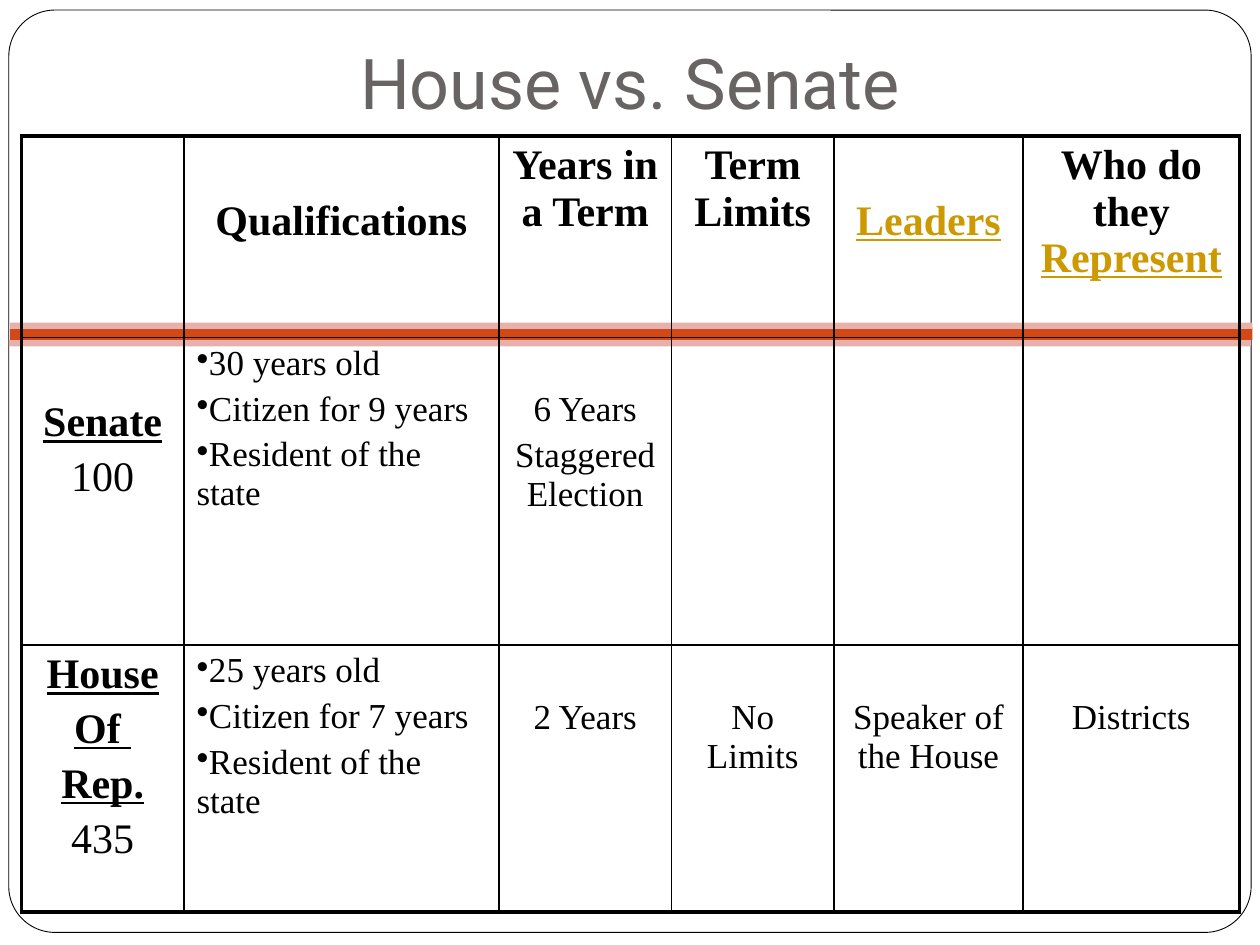
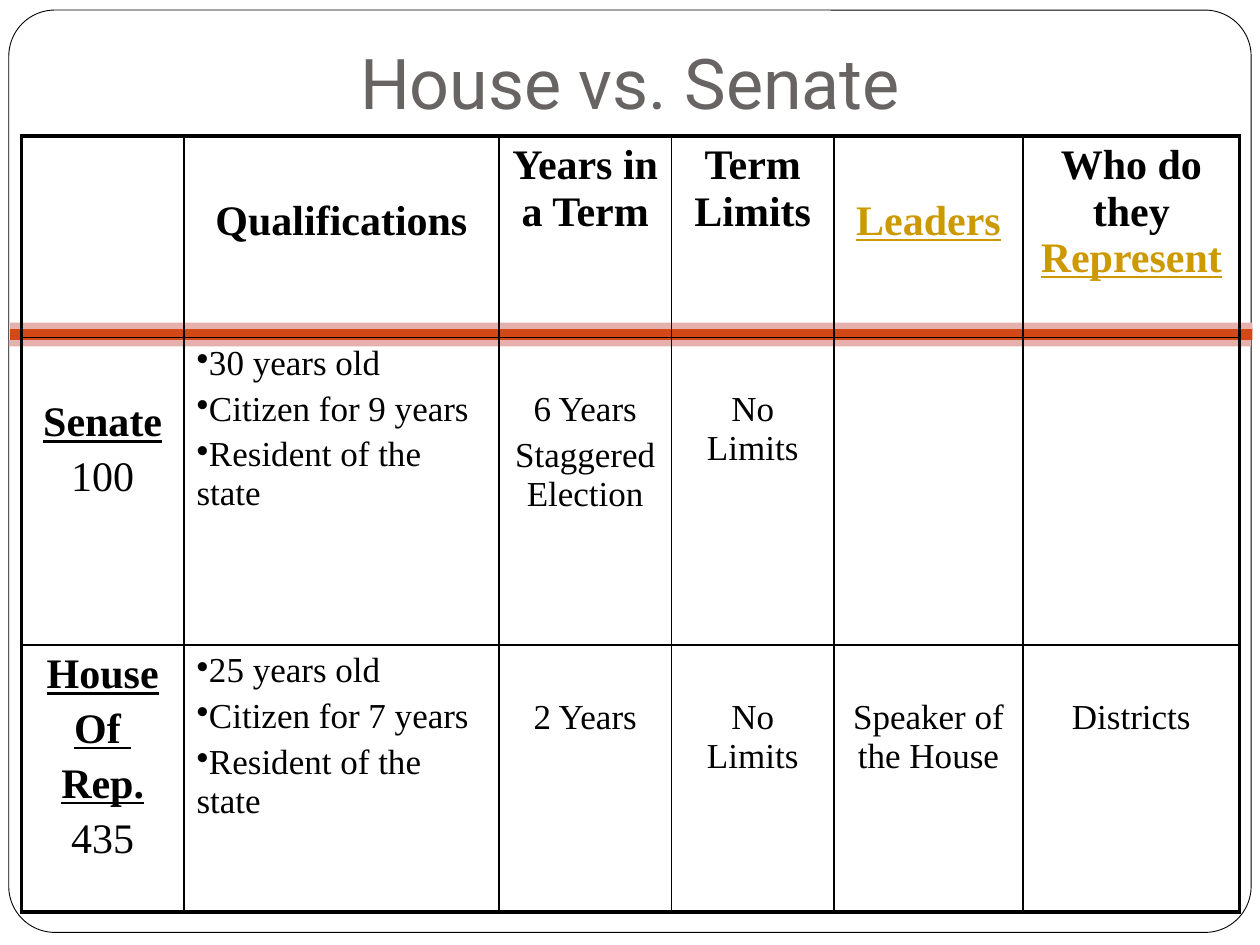
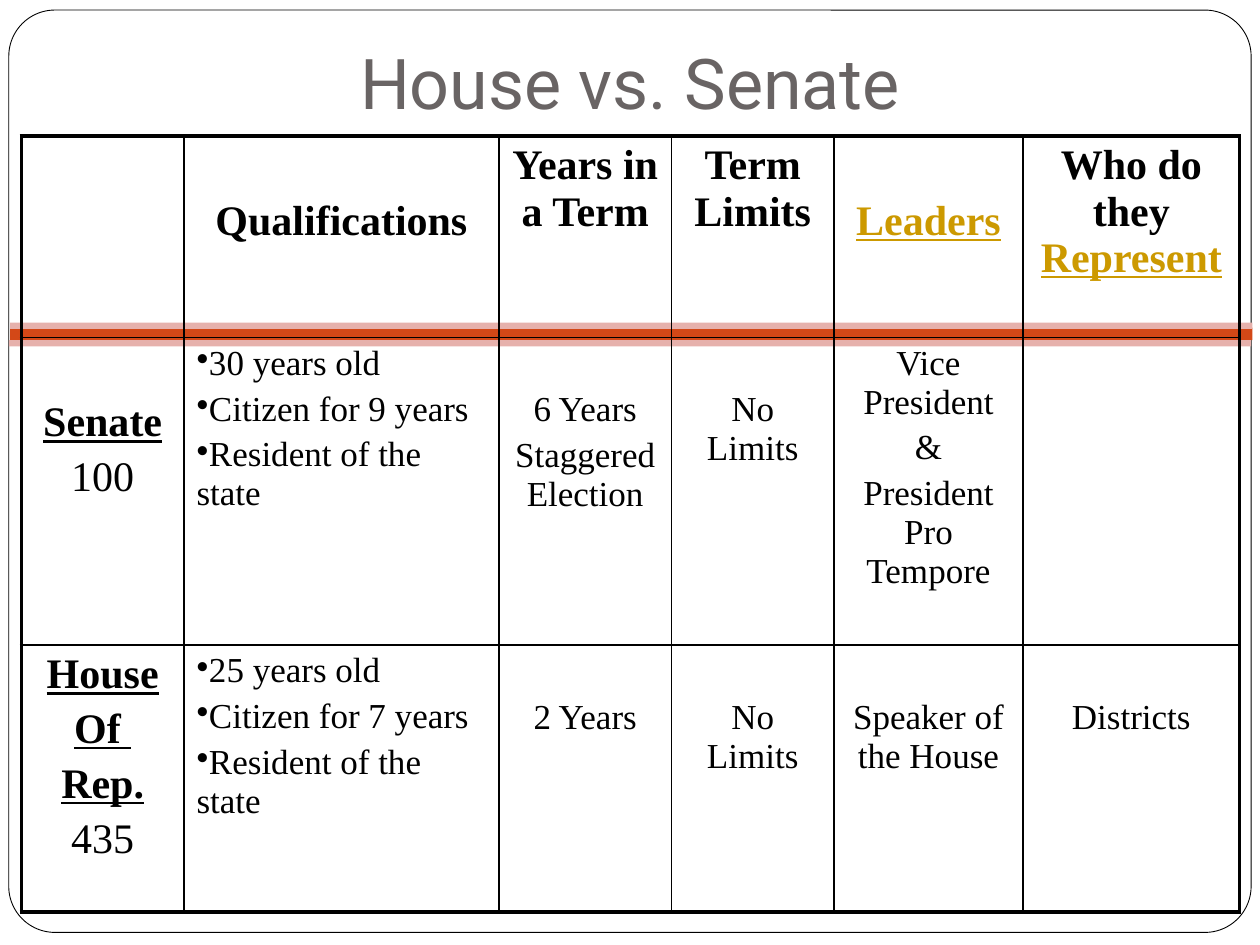
from lxml.etree import SubElement
from pptx import Presentation
from pptx.dml.color import RGBColor
from pptx.enum.shapes import MSO_SHAPE as Shape
from pptx.enum.text import MSO_ANCHOR as Anchor, PP_ALIGN as Align
from pptx.oxml.ns import qn
from pptx.util import Inches, Pt

COLORS = {"ink": "000000", "paper": "FFFFFF", "title": "696464",
          "band": "D34817", "edge": "E6B1AC", "gold": "CC9900"}
SERIF = "Times New Roman"
WIDTHS = [1.29, 2.5, 1.37, 1.29, 1.5, 1.72]
HEIGHTS = [1.6, 2.44, 2.12]
DROPS = {24: 0.49, 20: 0.42}  # top margin, by text size, that lowers a cell by one line
THIN, THICK = 1, 2.25


def head(*runs, drop=False):
    return {"lines": [runs], "size": 24, "drop": drop}


def label(*names, count, drop=False):
    lines = [[(name, "bu")] for name in names] + [[(count, "")]]
    return {"lines": lines, "size": 24, "drop": drop}


def note(*lines, drop=True, bullet=False):
    return {"lines": [[(line, "")] for line in lines], "size": 20,
            "drop": drop, "bullet": bullet}


def rules(age, years):
    return note(f"{age} years old", f"Citizen for {years} years",
                "Resident of the state", drop=False, bullet=True)


HEADER = [None, head(("Qualifications", "b"), drop=True),
          head(("Years in a Term", "b")), head(("Term Limits", "b")),
          head(("Leaders", "bug"), drop=True),
          head(("Who do they ", "b"), ("Represent", "bug"))]
SENATE = [label("Senate", count="100", drop=True), rules(30, 9),
          note("6 Years", "Staggered Election")]
ANSWERS = [note("No Limits"),
           note("Vice President", "&", "President Pro Tempore", drop=False)]
HOUSE = [label("House", "Of ", "Rep.", count="435"), rules(25, 7),
         note("2 Years"), note("No Limits"), note("Speaker of the House"),
         note("Districts")]


class Deck:
    def __init__(self):
        self.prs = Presentation()
        self.prs.slide_width, self.prs.slide_height = Inches(10), Inches(7.5)
        self.slide = None

    def color(self, name):
        return RGBColor.from_string(COLORS[name])

    def start(self):
        """Add a slide with the shared frame and band."""
        self.slide = self.prs.slides.add_slide(self.prs.slide_layouts[6])
        frame = self.shape(Shape.ROUNDED_RECTANGLE, 0.07, 0.08, 9.86, 7.32, "paper")
        frame.adjustments[0] = 0.05
        frame.line.color.rgb = self.color("ink")
        frame.line.width = Pt(0.5)
        self.shape(Shape.RECTANGLE, 0.08, 2.6, 9.86, 0.1, "band")
        self.shape(Shape.RECTANGLE, 0.08, 2.56, 9.86, 0.05, "edge")
        self.shape(Shape.RECTANGLE, 0.07, 2.7, 9.86, 0.05, "edge")

    def shape(self, kind, x, y, w, h, fill):
        item = self.slide.shapes.add_shape(kind, Inches(x), Inches(y), Inches(w), Inches(h))
        item.shadow.inherit = False
        item.fill.solid()
        item.fill.fore_color.rgb = self.color(fill)
        item.line.fill.background()
        return item

    def run(self, para, text, size, font, color, style=""):
        run = para.add_run()
        run.text = text
        run.font.size, run.font.name = Pt(size), font
        run.font.color.rgb = self.color(color)
        run.font.bold, run.font.underline = "b" in style, "u" in style

    def title(self, text):
        box = self.slide.shapes.add_textbox(Inches(0.75), Inches(0.33), Inches(8.5), Inches(0.75))
        frame = box.text_frame
        frame.word_wrap = True
        frame.vertical_anchor = Anchor.BOTTOM
        frame.margin_bottom = Inches(0.1)
        para = frame.paragraphs[0]
        para.alignment = Align.CENTER
        self.run(para, text, 40, "Roboto", "title")

    def border(self, cell, sides):
        props = cell._tc.get_or_add_tcPr()
        for side, width in sides.items():
            line = SubElement(props, qn(f"a:ln{side}"), w=str(Pt(width)))
            fill = SubElement(line, qn("a:solidFill"))
            SubElement(fill, qn("a:srgbClr"), val=COLORS["ink"])

    def fill_cell(self, cell, lines, size, drop, bullet=False):
        if drop:
            cell.margin_top = Inches(DROPS[size])
        frame = cell.text_frame
        for n, runs in enumerate(lines):
            para = frame.add_paragraph() if n else frame.paragraphs[0]
            if bullet:
                props = para._p.get_or_add_pPr()
                props.set("marL", "0")
                props.set("indent", "0")
                SubElement(props, qn("a:buChar"), char="•")
            para.alignment = Align.LEFT if bullet else Align.CENTER
            if n:
                para.space_before = Pt(size * 0.2)
            for text, style in runs:
                self.run(para, text, size, SERIF, "gold" if "g" in style else "ink", style)

    def table(self, rows):
        high, wide = len(HEIGHTS), len(WIDTHS)
        grid = self.slide.shapes.add_table(
            high, wide, Inches(0.17), Inches(1.08),
            Inches(sum(WIDTHS)), Inches(sum(HEIGHTS))).table
        grid.first_row = grid.horz_banding = False
        for col, width in zip(grid.columns, WIDTHS):
            col.width = Inches(width)
        for r, (row, height) in enumerate(zip(rows, HEIGHTS)):
            grid.rows[r].height = Inches(height)
            for c in range(wide):
                cell = grid.cell(r, c)
                outer = {"L": c == 0, "R": c == wide - 1, "T": r == 0, "B": r == high - 1}
                self.border(cell, {side: THICK if out else THIN for side, out in outer.items()})
                cell.fill.background()
                if c < len(row) and row[c]:
                    self.fill_cell(cell, **row[c])


def main():
    deck = Deck()
    for shown in range(len(ANSWERS) + 1):
        deck.start()
        deck.title("House vs. Senate")
        deck.table([HEADER, SENATE + ANSWERS[:shown], HOUSE])
    deck.prs.save("out.pptx")


if __name__ == "__main__":
    main()
